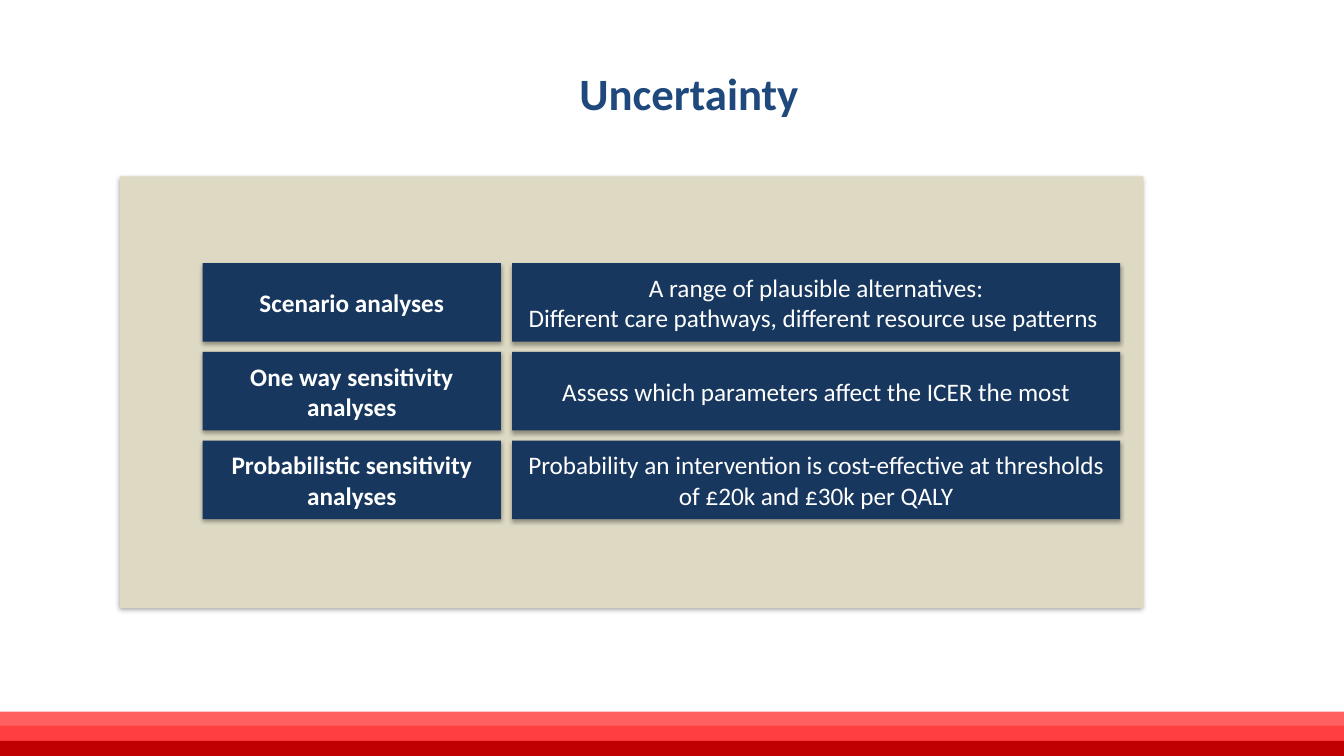
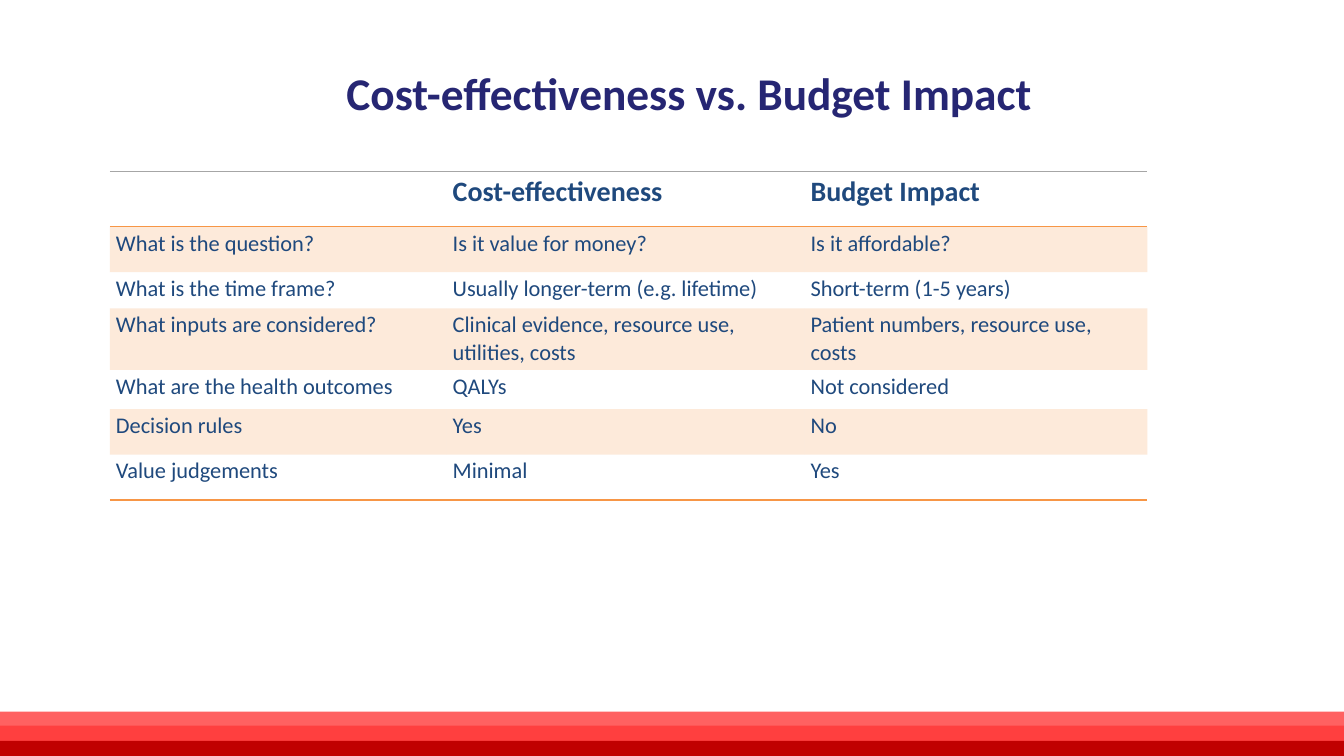
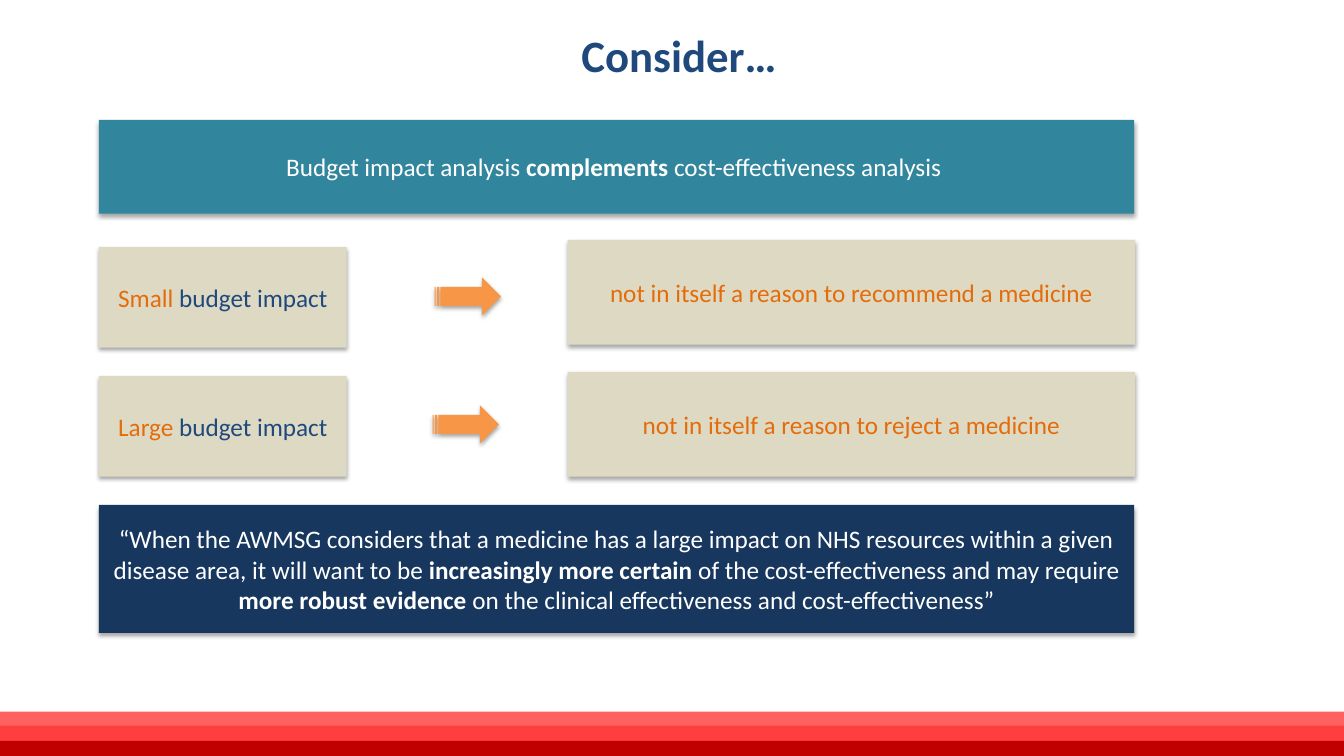
from lxml import etree
from pptx import Presentation
from pptx.dml.color import RGBColor
from pptx.enum.shapes import MSO_SHAPE
from pptx.enum.text import MSO_ANCHOR, PP_ALIGN
from pptx.oxml import parse_xml
from pptx.oxml.ns import nsdecls, qn
from pptx.util import Inches, Pt

RECTANGLE = MSO_SHAPE.RECTANGLE
STRIPED_ARROW = MSO_SHAPE.STRIPED_RIGHT_ARROW
TOP, MIDDLE = MSO_ANCHOR.TOP, MSO_ANCHOR.MIDDLE
LEFT, CENTER = PP_ALIGN.LEFT, PP_ALIGN.CENTER

FONT = "Calibri"
SLIDE_WIDTH, SLIDE_HEIGHT = 13.33, 7.5
PLAIN_TABLE_STYLE = "{2D5ABB26-0587-4C30-8999-92F81FD0307C}"
COLORS = {
    "blue": "1F497D",
    "indigo": "262673",
    "navy": "17375E",
    "teal": "31859C",
    "sand": "DDD9C3",
    "orange": "F79646",
    "dark orange": "E46C0A",
    "grey": "A6A6A6",
    "white": "FFFFFF",
    "light red": "FF6161",
    "red": "FF3F3F",
    "dark red": "C00000",
}
FOOTER_BANDS = [(7.06, "light red"), (7.2, "red"), (7.35, "dark red")]

SENSITIVITY_ROWS = [
    ("Scenario analyses",
     ["A range of plausible alternatives:",
      "Different care pathways, different resource use patterns "]),
    ("One way sensitivity analyses",
     ["Assess which parameters affect the ICER the most"]),
    ("Probabilistic sensitivity analyses",
     ["Probability an intervention is cost-effective at thresholds "
      "of £20k and £30k per QALY"]),
]

COMPARISON = [
    ("", "Cost-effectiveness", "Budget Impact"),
    ("What is the question?", "Is it value for money?", "Is it affordable?"),
    ("What is the time frame?", "Usually longer-term (e.g. lifetime)",
     "Short-term (1-5 years)"),
    ("What inputs are considered?",
     "Clinical evidence, resource use, utilities, costs",
     "Patient numbers, resource use, costs"),
    ("What are the health outcomes", "QALYs", "Not considered"),
    ("Decision rules", "Yes", "No"),
    ("Value judgements", "Minimal", "Yes"),
]
COLUMN_WIDTHS = [3.34, 3.55, 3.4]
ROW_HEIGHTS = [0.55, 0.45, 0.36, 0.61, 0.39, 0.45, 0.45]

# size, verdict, label top, arrow left, arrow top, verdict top
IMPACT_ROWS = [
    ("Small ", "not in itself a reason to recommend a medicine",
     2.45, 4.31, 2.75, 2.38),
    ("Large ", "not in itself a reason to reject a medicine",
     3.73, 4.29, 4.02, 3.69),
]


def rgb(name):
    return RGBColor.from_string(COLORS[name])


def write(frame, paragraphs, size=18, color="white", bold=False,
          align=CENTER, anchor=MIDDLE):
    """Fill a frame; a paragraph is a string or a list of (text, overrides)."""
    frame.word_wrap = True
    frame.vertical_anchor = anchor
    for index, content in enumerate(paragraphs):
        paragraph = frame.paragraphs[0] if index == 0 else frame.add_paragraph()
        paragraph.alignment = align
        pieces = [(content, {})] if isinstance(content, str) else content
        for text, overrides in pieces:
            run = paragraph.add_run()
            run.text = text
            run.font.name = FONT
            run.font.size = Pt(size)
            run.font.bold = overrides.get("bold", bold)
            run.font.color.rgb = rgb(overrides.get("color", color))


def add_block(slide, box, fill, kind=RECTANGLE, paragraphs=(), shadow=True,
              **text_format):
    block = slide.shapes.add_shape(kind, *map(Inches, box))
    block.fill.solid()
    block.fill.fore_color.rgb = rgb(fill)
    block.line.fill.background()
    block.shadow.inherit = False
    if shadow:
        effects = block._element.spPr.find(qn("a:effectLst"))
        effects.append(parse_xml(
            f'<a:outerShdw {nsdecls("a")} blurRad="{Pt(3.1)}" dist="{Pt(1.8)}" '
            'dir="5400000" rotWithShape="0"><a:srgbClr val="000000">'
            '<a:alpha val="35000"/></a:srgbClr></a:outerShdw>'))
    write(block.text_frame, paragraphs, **text_format)


def add_titled_slide(deck, title, left=1, top=0.6, size=32, color="blue"):
    slide = deck.slides.add_slide(deck.slide_layouts[6])
    for band_top, band_color in FOOTER_BANDS:
        add_block(slide, (0, band_top, SLIDE_WIDTH, 0.16), band_color,
                  shadow=False)
    heading = slide.shapes.add_textbox(
        *map(Inches, (left, top, 11.67, 0.83)))
    write(heading.text_frame, [title], size=size, color=color, bold=True,
          anchor=TOP)
    return slide


def add_border(cell, side, color, width=1):
    """Draw one cell edge; side is T or B. Call before filling the cell."""
    cell._tc.get_or_add_tcPr().append(parse_xml(
        f'<a:ln{side} {nsdecls("a")} w="{Pt(width)}"><a:solidFill>'
        f'<a:srgbClr val="{COLORS[color]}"/></a:solidFill></a:ln{side}>'))


def fill_tint(cell, color, percent):
    cell.fill.solid()
    cell.fill.fore_color.rgb = rgb(color)
    tint = cell._tc.tcPr.find(".//" + qn("a:solidFill"))
    for fill in cell._tc.tcPr.findall(qn("a:solidFill")):
        tint = fill
    etree.SubElement(tint[0], qn("a:alpha")).set("val", str(percent * 1000))


def style_comparison_cell(cell, text, row):
    header = row == 0
    cell.margin_left = cell.margin_right = Inches(0.06)
    cell.margin_top = cell.margin_bottom = Inches(0.03)
    if header:
        add_border(cell, "T", "grey", 0.5)
    if row in (0, len(COMPARISON) - 1):
        add_border(cell, "B", "orange")
    if row % 2:
        fill_tint(cell, "orange", 20)
    else:
        cell.fill.background()
    if text:
        write(cell.text_frame, [text], size=20 if header else 16,
              color="blue", bold=header, align=LEFT, anchor=TOP)


def add_comparison_table(slide):
    frame = slide.shapes.add_table(
        len(COMPARISON), len(COLUMN_WIDTHS), Inches(1.09), Inches(1.7),
        Inches(sum(COLUMN_WIDTHS)), Inches(sum(ROW_HEIGHTS)))
    table = frame.table
    table.first_row = table.horz_banding = False
    table._tbl.tblPr.find(qn("a:tableStyleId")).text = PLAIN_TABLE_STYLE
    for column, width in zip(table.columns, COLUMN_WIDTHS):
        column.width = Inches(width)
    for row, (texts, height) in enumerate(zip(COMPARISON, ROW_HEIGHTS)):
        table.rows[row].height = Inches(height)
        for column, text in enumerate(texts):
            style_comparison_cell(table.cell(row, column), text, row)


def build_uncertainty(deck):
    slide = add_titled_slide(deck, "Uncertainty")
    add_block(slide, (1.19, 1.75, 10.15, 4.28), "sand")
    for row, (analysis, purpose) in enumerate(SENSITIVITY_ROWS):
        top = 2.61 + row * 0.88
        add_block(slide, (2.01, top, 2.96, 0.78), "navy",
                  paragraphs=[analysis], bold=True)
        add_block(slide, (5.08, top, 6.03, 0.78), "navy", paragraphs=purpose)


def build_comparison(deck):
    slide = add_titled_slide(deck, "Cost-effectiveness vs. Budget Impact",
                             size=32.4, color="indigo")
    add_comparison_table(slide)


def build_considerations(deck):
    slide = add_titled_slide(deck, "Consider…", left=0.9, top=0.23)
    strong = {"bold": True}
    add_block(slide, (0.98, 1.19, 10.27, 0.93), "teal", paragraphs=[[
        ("Budget impact analysis ", {}),
        ("complements", strong),
        (" cost-effectiveness analysis ", {}),
    ]])
    for (size, verdict, label_top, arrow_left, arrow_top,
         verdict_top) in IMPACT_ROWS:
        add_block(slide, (0.98, label_top, 2.46, 1), "sand",
                  paragraphs=[[(size, {"color": "dark orange"}),
                               ("budget impact", {})]], color="blue")
        add_block(slide, (arrow_left, arrow_top, 0.66, 0.38), "orange",
                  kind=STRIPED_ARROW)
        add_block(slide, (5.63, verdict_top, 5.63, 1.04), "sand",
                  paragraphs=[verdict], color="dark orange")
    add_block(slide, (0.98, 5.01, 10.27, 1.27), "navy", paragraphs=[[
        ("“When the AWMSG considers that a medicine has a large impact on NHS "
         "resources within a given disease area, it will want to be ", {}),
        ("increasingly more certain", strong),
        (" of the cost-effectiveness and may require ", {}),
        ("more robust evidence ", strong),
        ("on the clinical effectiveness and cost-effectiveness”", {}),
    ]])


def main():
    deck = Presentation()
    deck.slide_width = Inches(SLIDE_WIDTH)
    deck.slide_height = Inches(SLIDE_HEIGHT)
    build_uncertainty(deck)
    build_comparison(deck)
    build_considerations(deck)
    deck.save("out.pptx")


if __name__ == "__main__":
    main()
